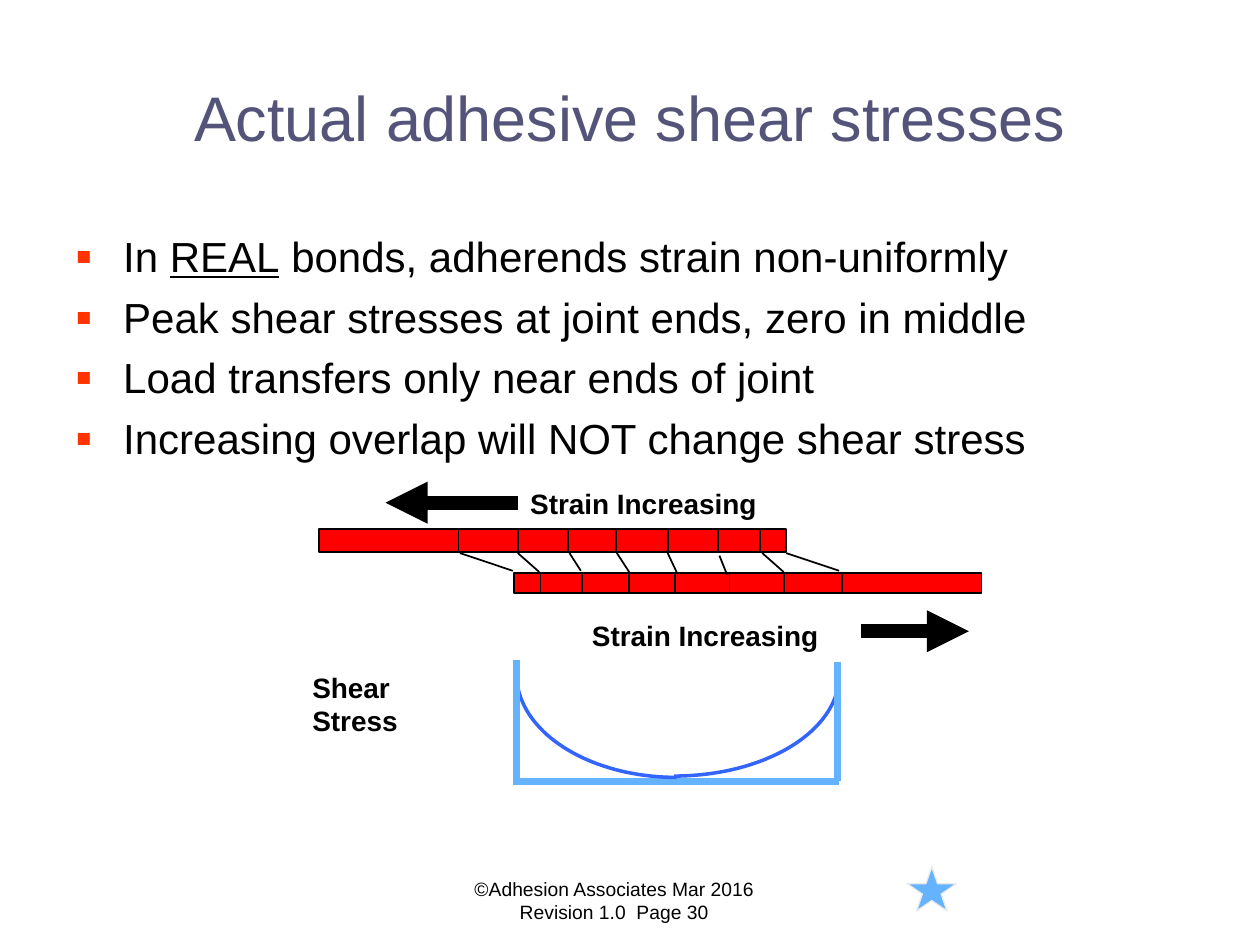
"""Build the slide on actual adhesive shear stresses in a lap joint."""
from dataclasses import dataclass
from math import cos, pi, sin
from typing import Optional

from lxml import etree
from pptx import Presentation
from pptx.dml.color import RGBColor
from pptx.enum.shapes import MSO_CONNECTOR, MSO_SHAPE
from pptx.enum.text import MSO_ANCHOR, MSO_AUTO_SIZE, PP_ALIGN
from pptx.oxml.ns import qn
from pptx.util import Inches, Pt

STRAIGHT = MSO_CONNECTOR.STRAIGHT
RECTANGLE = MSO_SHAPE.RECTANGLE
STAR = MSO_SHAPE.STAR_5_POINT
CENTER, LEFT = PP_ALIGN.CENTER, PP_ALIGN.LEFT
TOP, MIDDLE = MSO_ANCHOR.TOP, MSO_ANCHOR.MIDDLE
FIT_SHAPE = MSO_AUTO_SIZE.SHAPE_TO_FIT_TEXT
COLORS = {
    "title": "54547A", "text": "000000", "bullet": "FF3300", "adherend": "FF0000",
    "axis": "65B2FF", "curve": "3365FB", "star_edge": "EAEAEA", "paper": "FFFFFF",
}


@dataclass
class TextBlock:
    box: tuple
    lines: list
    size: float
    color: str = "text"
    bold: bool = False
    align: int = LEFT
    anchor: int = TOP
    bulleted: bool = False
    label: bool = False
    wrap: bool = True
    top_inset: float = 0.05


@dataclass
class Line:
    start: tuple
    end: tuple
    color: str = "text"
    width: float = 1
    arrow: bool = False


@dataclass
class Arc:
    center: tuple
    radii: tuple
    first_angle: float


@dataclass
class Adherend:
    box: tuple
    divisions: list
    tick_top: float
    tick_bottom: float


FOOTER = TextBlock((3.3, 6.91, 3.15, 0.52),
                   [["©Adhesion Associates Mar 2016"], ["Revision 1.0  Page 30"]],
                   11, align=CENTER)
TITLE = TextBlock((0.5, 0.3, 9, 1.25), [["Actual adhesive shear stresses"]], 36,
                  color="title", align=CENTER, anchor=MIDDLE)
BODY = TextBlock((0.5, 1.75, 9, 4.92), [
    ["In ", "REAL", " bonds, adherends strain non-uniformly"],
    ["Peak shear stresses at joint ends, zero in middle"],
    ["Load transfers only near ends of joint"],
    ["Increasing overlap will NOT change shear stress"],
], 24, bulleted=True, top_inset=0.08)
STRAIN = [["Strain Increasing"]]
UPPER_LABEL = TextBlock((4.11, 3.81, 2.93, 0.36), STRAIN, 16, bold=True, label=True)
LOWER_LABEL = TextBlock((4.6, 4.86, 2.07, 0.36), STRAIN, 16, bold=True, label=True)
STRESS_LABEL = TextBlock((2.38, 5.27, 0.88, 0.63), [["Shear"], ["Stress"]], 16,
                         bold=True, label=True, wrap=False)
BASE_AXIS = Line((4.07, 6.2), (6.66, 6.2), "axis", 4)
SIDE_AXES = [Line((4.1, 5.24), (4.1, 6.18), "axis", 4),
             Line((6.65, 5.25), (6.65, 6.2), "axis", 4)]
STRESS_ARCS = [Arc((5.37, 5.35), (1.27, 0.82), pi / 2),
               Arc((5.35, 5.36), (1.31, 0.8), 0)]
ADHERENDS = [
    Adherend((2.53, 4.2, 3.71, 0.18), [3.64, 4.11, 4.51, 4.89, 5.3, 5.7, 6.03], 4.19, 4.39),
    Adherend((4.08, 4.55, 3.71, 0.16), [4.29, 4.62, 4.99, 5.36, 5.79, 6.22, 6.68], 4.55, 4.71),
]
ADHESIVE = [
    Line((3.65, 4.39), (4.07, 4.53)), Line((4.11, 4.39), (4.28, 4.54)),
    Line((4.52, 4.39), (4.61, 4.53)), Line((4.89, 4.38), (5, 4.55)),
    Line((5.29, 4.37), (5.37, 4.54)), Line((5.71, 4.41), (5.77, 4.56)),
    Line((6.05, 4.39), (6.22, 4.54)), Line((6.24, 4.39), (6.66, 4.53)),
]
RIGHT_ARROW = Line((6.83, 5.01), (7.69, 5.01), width=8, arrow=True)
LEFT_ARROW = Line((4.11, 3.99), (3.06, 3.99), width=8, arrow=True)


def rgb(name: str) -> RGBColor:
    """Return the named colour."""
    return RGBColor.from_string(COLORS[name])


def add_bullet(paragraph) -> None:
    """Give a paragraph a square bullet and a hanging indent."""
    properties = paragraph._p.get_or_add_pPr()
    properties.set("marL", str(Inches(0.38)))
    properties.set("indent", str(Inches(-0.38)))
    color = etree.SubElement(properties, qn("a:buClr"))
    etree.SubElement(color, qn("a:srgbClr"), val=COLORS["bullet"])
    etree.SubElement(properties, qn("a:buSzPct"), val="115000")
    etree.SubElement(properties, qn("a:buFont"), typeface="Arial")
    etree.SubElement(properties, qn("a:buChar"), char="▪")


def add_text(slide, block: TextBlock):
    """Add a text box and return it."""
    shape = slide.shapes.add_textbox(*map(Inches, block.box))
    frame = shape.text_frame
    formats = {"word_wrap": block.wrap, "vertical_anchor": block.anchor,
               "margin_top": Inches(block.top_inset)}
    if block.label:
        formats["auto_size"] = FIT_SHAPE
        shape.fill.solid()
        shape.fill.fore_color.rgb = rgb("paper")
    for name, value in formats.items():
        setattr(frame, name, value)
    font_formats = {"name": "Arial", "size": Pt(block.size), "bold": block.bold}
    for index, pieces in enumerate(block.lines):
        paragraph = frame.add_paragraph() if index else frame.paragraphs[0]
        paragraph.alignment = block.align
        if block.bulleted:
            paragraph.space_before = Pt(5.8 if index else 0)
            add_bullet(paragraph)
        for piece in pieces:
            run = paragraph.add_run()
            run.text = piece
            for name, value in font_formats.items():
                setattr(run.font, name, value)
            run.font.color.rgb = rgb(block.color)
            if piece == "REAL":
                run.font.underline = True
    return shape


def add_line(slide, line: Line, source: Optional[object] = None) -> None:
    """Add a straight line, joined to the left side of a source if given."""
    connector = slide.shapes.add_connector(STRAIGHT, *map(Inches, line.start + line.end))
    connector.line.color.rgb = rgb(line.color)
    connector.line.width = Pt(line.width)
    if line.arrow:
        etree.SubElement(connector.line._get_or_add_ln(), qn("a:tailEnd"), type="triangle")
    etree.SubElement(connector._element.spPr, qn("a:effectLst"))
    if source is not None:
        connector.begin_connect(source, 1)


def add_filled(slide, kind: int, box: tuple, fill: str, edge: str, width: float) -> None:
    """Add a filled and outlined preset shape."""
    shape = slide.shapes.add_shape(kind, *map(Inches, box))
    shape.shadow.inherit = False
    shape.fill.solid()
    shape.fill.fore_color.rgb = rgb(fill)
    shape.line.color.rgb = rgb(edge)
    shape.line.width = Pt(width)


def add_arc(slide, arc: Arc, steps: int = 40) -> None:
    """Add a quarter ellipse as an open outline."""
    angles = [arc.first_angle + pi / 2 * step / steps for step in range(steps + 1)]
    points = [(Inches(arc.center[0] + arc.radii[0] * cos(angle)),
               Inches(arc.center[1] + arc.radii[1] * sin(angle))) for angle in angles]
    builder = slide.shapes.build_freeform(*points[0])
    builder.add_line_segments(points[1:], close=False)
    shape = builder.convert_to_shape()
    shape.shadow.inherit = False
    shape.fill.background()
    shape.line.color.rgb = rgb("curve")
    shape.line.width = Pt(2)


def add_adherend(slide, adherend: Adherend) -> None:
    """Add an adherend bar with its strain divisions."""
    add_filled(slide, RECTANGLE, adherend.box, "adherend", "text", 1)
    for left in adherend.divisions:
        add_line(slide, Line((left, adherend.tick_top), (left, adherend.tick_bottom)))


def main() -> None:
    """Build and save the presentation."""
    presentation = Presentation()
    presentation.slide_width, presentation.slide_height = Inches(10), Inches(7.5)
    slide = presentation.slides.add_slide(presentation.slide_layouts[6])
    for block in (FOOTER, TITLE, BODY):
        add_text(slide, block)
    add_line(slide, BASE_AXIS)
    for arc in STRESS_ARCS:
        add_arc(slide, arc)
    for axis in SIDE_AXES:
        add_line(slide, axis)
    upper_label = add_text(slide, UPPER_LABEL)
    for adherend in ADHERENDS:
        add_adherend(slide, adherend)
    for line in ADHESIVE:
        add_line(slide, line)
    add_text(slide, LOWER_LABEL)
    add_line(slide, RIGHT_ARROW)
    add_line(slide, LEFT_ARROW, upper_label)
    add_text(slide, STRESS_LABEL)
    add_filled(slide, STAR, (7.2, 6.88, 0.39, 0.35), "axis", "star_edge", 0.75)
    presentation.save("out.pptx")


if __name__ == "__main__":
    main()
